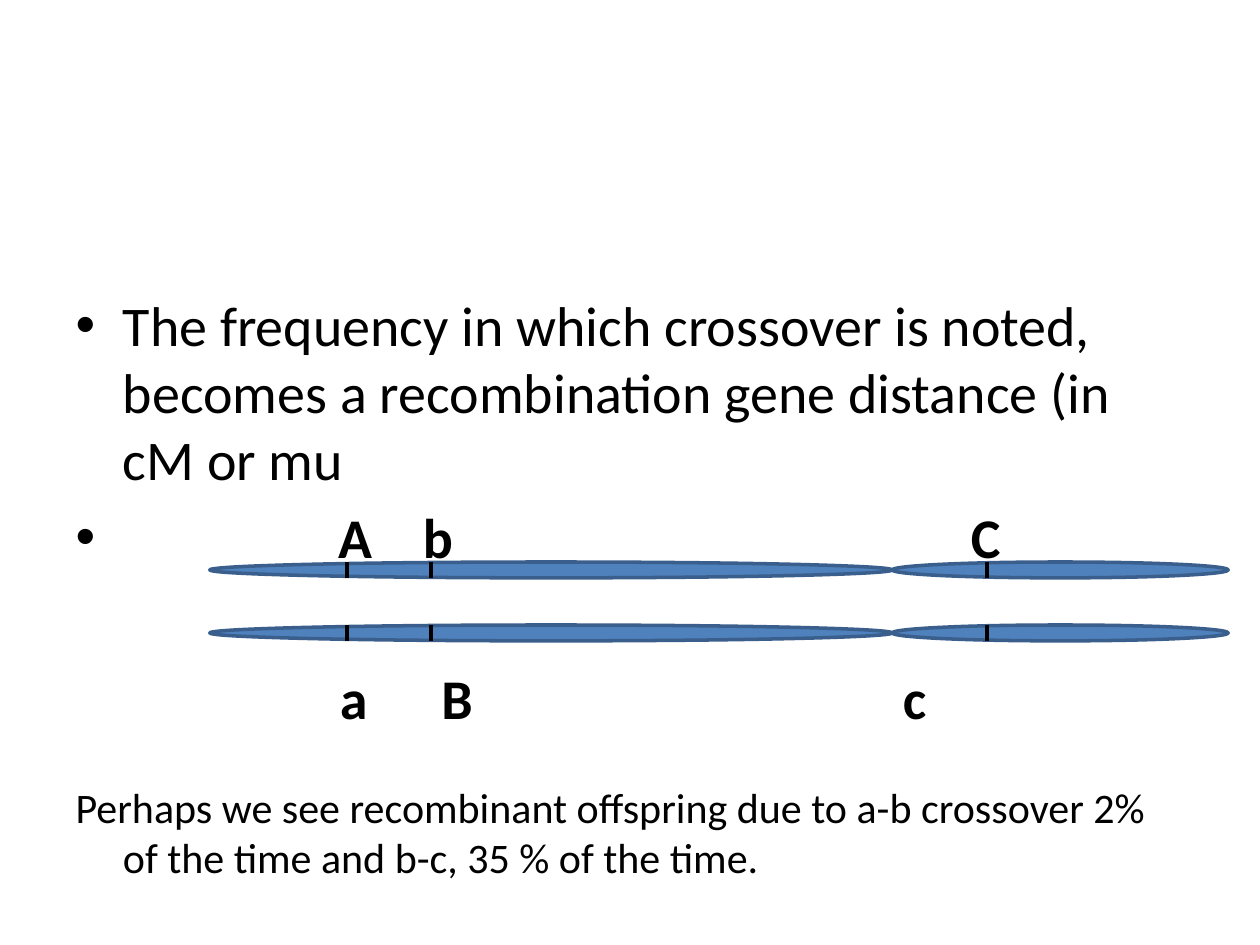
import pptx
import pptx.dml.color
import pptx.enum.shapes
import pptx.enum.text
import pptx.oxml.ns
import pptx.util
from lxml import etree

Cm = pptx.util.Cm
Pt = pptx.util.Pt
RGBColor = pptx.dml.color.RGBColor
qn = pptx.oxml.ns.qn

BLACK = RGBColor(0x00, 0x00, 0x00)
CHROMOSOME_FILL = RGBColor(0x4F, 0x81, 0xBD)
CHROMOSOME_LINE = RGBColor(0x3A, 0x5F, 0x8C)
FONT = "Calibri"

CHROMOSOME_TOPS = (11.33, 12.6)
CHROMOSOME_HEIGHT = 0.32
ARMS = ((4.23, 13.76), (17.99, 6.77))
LOCI = (6.99, 8.68, 19.9)
UPPER_ALLELE_TABS = (5.29, 7.0, 18.05)
LOWER_ALLELES = (("a", 6.85), ("B", 8.9), ("c", 18.2))
LOWER_ALLELE_TOP = 13.38


def format_paragraph(paragraph, text, size, space_before, bold=False):
    """Fill a paragraph and set its font and spacing."""
    paragraph.text = text
    paragraph.space_before = Pt(space_before)
    for run in paragraph.runs:
        run.font.name = FONT
        run.font.size = Pt(size)
        run.font.bold = bold
        run.font.color.rgb = BLACK


def set_tabs(paragraph, positions):
    """Measure left tab stops from the edge of the text area."""
    properties = paragraph._p.get_or_add_pPr()
    properties.set("marL", "0")
    properties.set("indent", "0")
    tab_list = etree.SubElement(properties, qn("a:tabLst"))
    for position in positions:
        etree.SubElement(tab_list, qn("a:tab"), pos=str(Cm(position)), algn="l")


def fill_body(body):
    """Place the body text with the upper row of alleles."""
    body.left, body.top = Cm(1.27), Cm(5.72)
    body.width, body.height = Cm(22.86), Cm(10.64)
    text_frame = body.text_frame
    text_frame.word_wrap = True
    text_frame.auto_size = pptx.enum.text.MSO_AUTO_SIZE.NONE
    text_frame.vertical_anchor = pptx.enum.text.MSO_ANCHOR.TOP

    format_paragraph(
        text_frame.paragraphs[0],
        "The frequency in which crossover is noted, becomes a recombination "
        "gene distance (in cM or mu",
        32, 6.4)

    upper_alleles = text_frame.add_paragraph()
    format_paragraph(upper_alleles, "\tA\tb\tC", 32, 6.4, bold=True)
    set_tabs(upper_alleles, UPPER_ALLELE_TABS)

    example = text_frame.add_paragraph()
    format_paragraph(
        example,
        "Perhaps we see recombinant offspring due to a-b crossover 2% of the "
        "time and b-c, 35 % of the time.",
        24, 120.5)
    etree.SubElement(example._p.get_or_add_pPr(), qn("a:buNone"))


def add_allele(slide, text, left):
    """Label one allele below the lower chromosome."""
    label = slide.shapes.add_textbox(
        Cm(left), Cm(LOWER_ALLELE_TOP), Cm(1.2), Cm(1.4))
    text_frame = label.text_frame
    text_frame.word_wrap = True
    text_frame.margin_left = text_frame.margin_right = 0
    text_frame.margin_top = text_frame.margin_bottom = 0
    format_paragraph(text_frame.paragraphs[0], text, 32, 0, bold=True)


def add_arm(shapes, left, top, width):
    """Add one arm of a chromosome."""
    arm = shapes.add_shape(
        pptx.enum.shapes.MSO_SHAPE.OVAL,
        Cm(left), Cm(top), Cm(width), Cm(CHROMOSOME_HEIGHT))
    arm.shadow.inherit = False
    arm.fill.solid()
    arm.fill.fore_color.rgb = CHROMOSOME_FILL
    arm.line.color.rgb = CHROMOSOME_LINE
    arm.line.width = Pt(2)


def add_locus(shapes, left, top):
    """Mark a gene locus across a chromosome."""
    locus = shapes.add_connector(
        pptx.enum.shapes.MSO_CONNECTOR.STRAIGHT,
        Cm(left), Cm(top), Cm(left), Cm(top + CHROMOSOME_HEIGHT))
    locus.line.color.rgb = BLACK
    locus.line.width = Pt(2.25)
    etree.SubElement(locus._element.spPr, qn("a:effectLst"))


def add_chromosome(slide, top):
    """Group the arms and loci of one chromosome."""
    shapes = slide.shapes.add_group_shape().shapes
    for left, width in ARMS:
        add_arm(shapes, left, top, width)
    for left in LOCI:
        add_locus(shapes, left, top)


def main():
    """Build and save the presentation."""
    presentation = pptx.Presentation()
    presentation.slide_width = Cm(25.4)
    presentation.slide_height = Cm(19.05)
    slide = presentation.slides.add_slide(presentation.slide_layouts[1])
    title = slide.shapes.title._element
    title.getparent().remove(title)
    fill_body(slide.placeholders[1])
    for top in CHROMOSOME_TOPS:
        add_chromosome(slide, top)
    for text, left in LOWER_ALLELES:
        add_allele(slide, text, left)
    presentation.save("out.pptx")


if __name__ == "__main__":
    main()
